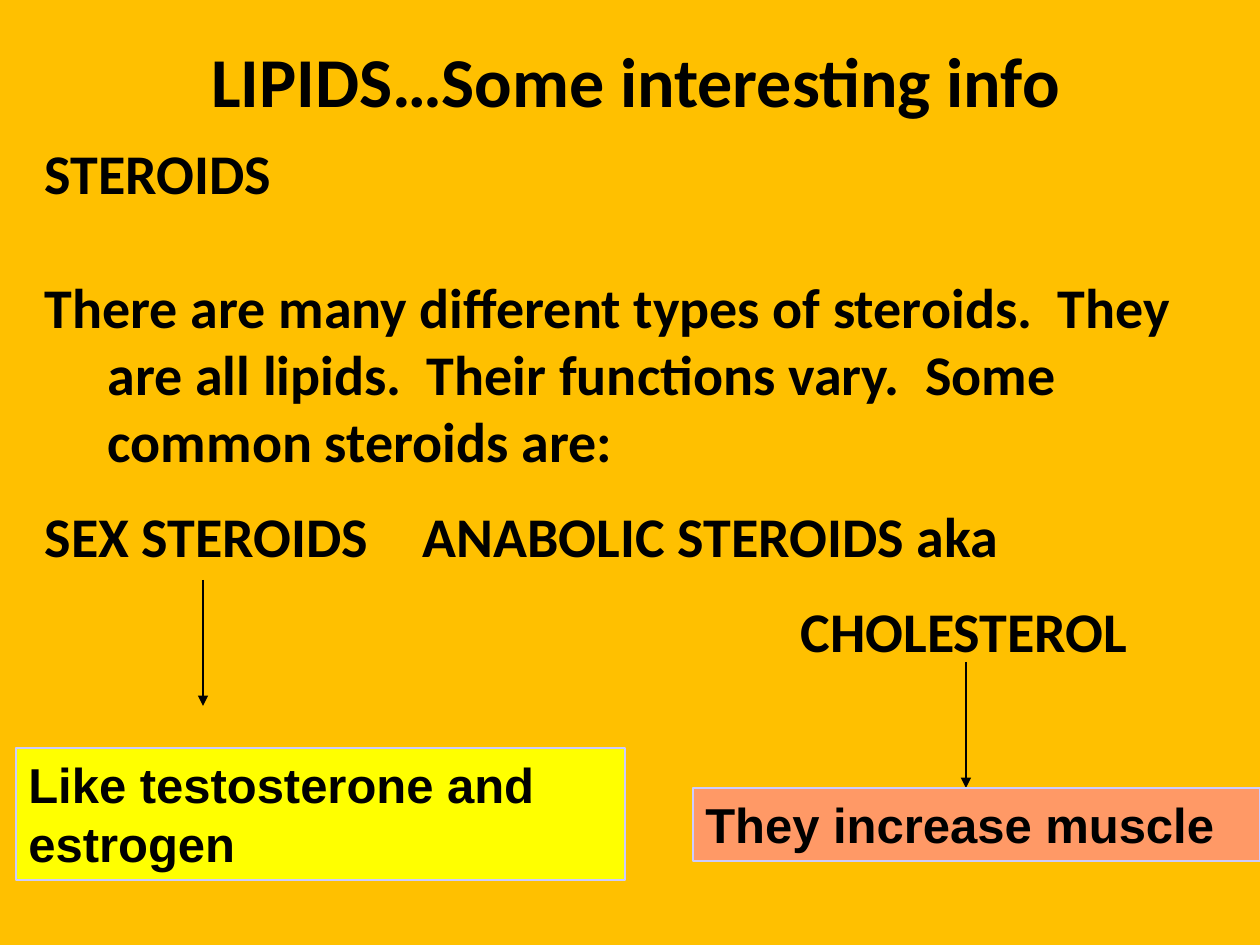
"""Build the slide on steroids as lipids."""
from lxml.etree import SubElement
from pptx import Presentation
from pptx.dml.color import RGBColor
from pptx.enum.shapes import MSO_CONNECTOR, MSO_SHAPE
from pptx.enum.text import MSO_ANCHOR, MSO_AUTO_SIZE, PP_ALIGN
from pptx.oxml.ns import qn
from pptx.util import Emu, Pt

PX = 914400 // 126
BLACK = "000000"
TITLE = "LIPIDS…Some interesting info"
HANGING = dict(marL=63, indent=-63)
BODY = [
    ("STEROIDS", 0, HANGING, None),
    ("There are many different types of steroids.  They are all lipids.  "
     "Their functions vary.  Some common steroids are:", 38, HANGING, None),
    ("SEX STEROIDS\tANABOLIC STEROIDS aka", 16, dict(marL=0, indent=0), 580),
    ("CHOLESTEROL", 16, dict(marL=693, indent=63), None),
]
ARROWS = [(203, 580), (966, 662)]
ARROW_LENGTH = 126
BOXES = [
    ("Like testosterone and estrogen", (16, 748, 609, 132), "FFFF00"),
    ("They increase muscle", (693, 788, 567, 73), "FF9966"),
]


def px(n):
    return Emu(n * PX)


def rgb(value):
    return RGBColor.from_string(value)


def place(sp, box):
    for name, n in zip(("left", "top", "width", "height"), box):
        setattr(sp, name, px(n))


def write(p, text, size, font="Calibri"):
    r = p.add_run()
    r.text = text
    for name, value in dict(size=Pt(size), name=font, bold=True).items():
        setattr(r.font, name, value)
    r.font.color.rgb = rgb(BLACK)


def frame(sp, anchor):
    tf = sp.text_frame
    values = dict(word_wrap=True, auto_size=MSO_AUTO_SIZE.NONE, vertical_anchor=anchor)
    for name, value in values.items():
        setattr(tf, name, value)
    return tf


def add_title(s):
    sp = s.shapes.title
    place(sp, (100, 0, 1071, 158))
    p = frame(sp, MSO_ANCHOR.MIDDLE).paragraphs[0]
    p.alignment = PP_ALIGN.CENTER
    write(p, TITLE, 40)


def add_body(s):
    sp = s.placeholders[1]
    place(sp, (32, 132, 1197, 696))
    tf = frame(sp, MSO_ANCHOR.TOP)
    for i, (text, before, indents, tab) in enumerate(BODY):
        p = tf.add_paragraph() if i else tf.paragraphs[0]
        p.space_before = Pt(before)
        pPr = p._p.get_or_add_pPr()
        for name, n in indents.items():
            pPr.set(name, str(px(n)))
        SubElement(pPr, qn("a:buNone"))
        if tab:
            tabs = SubElement(pPr, qn("a:tabLst"))
            SubElement(tabs, qn("a:tab"), pos=str(px(tab)), algn="l")
        write(p, text, 32)


def add_arrow(s, x, y):
    line = s.shapes.add_connector(
        MSO_CONNECTOR.STRAIGHT, px(x), px(y), px(x), px(y + ARROW_LENGTH))
    line.line.color.rgb = rgb(BLACK)
    line.line.width = Pt(1.5)
    SubElement(line.line._get_or_add_ln(), qn("a:tailEnd"), type="triangle")
    SubElement(line._element.spPr, qn("a:effectLst"))


def add_box(s, text, box, fill):
    sp = s.shapes.add_shape(MSO_SHAPE.RECTANGLE, *map(px, box))
    sp.shadow.inherit = False
    sp.fill.solid()
    sp.fill.fore_color.rgb = rgb(fill)
    sp.line.color.rgb = rgb("CCCCFF")
    sp.line.width = Pt(0.75)
    p = frame(sp, MSO_ANCHOR.TOP).paragraphs[0]
    p.alignment = PP_ALIGN.LEFT
    write(p, text, 28, "Arial")


def main():
    prs = Presentation()
    prs.slide_width, prs.slide_height = px(1260), px(945)
    s = prs.slides.add_slide(prs.slide_layouts[1])
    s.background.fill.solid()
    s.background.fill.fore_color.rgb = rgb("FFC000")
    add_title(s)
    add_body(s)
    for arrow in ARROWS:
        add_arrow(s, *arrow)
    for box in BOXES:
        add_box(s, *box)
    prs.save("out.pptx")


if __name__ == "__main__":
    main()
